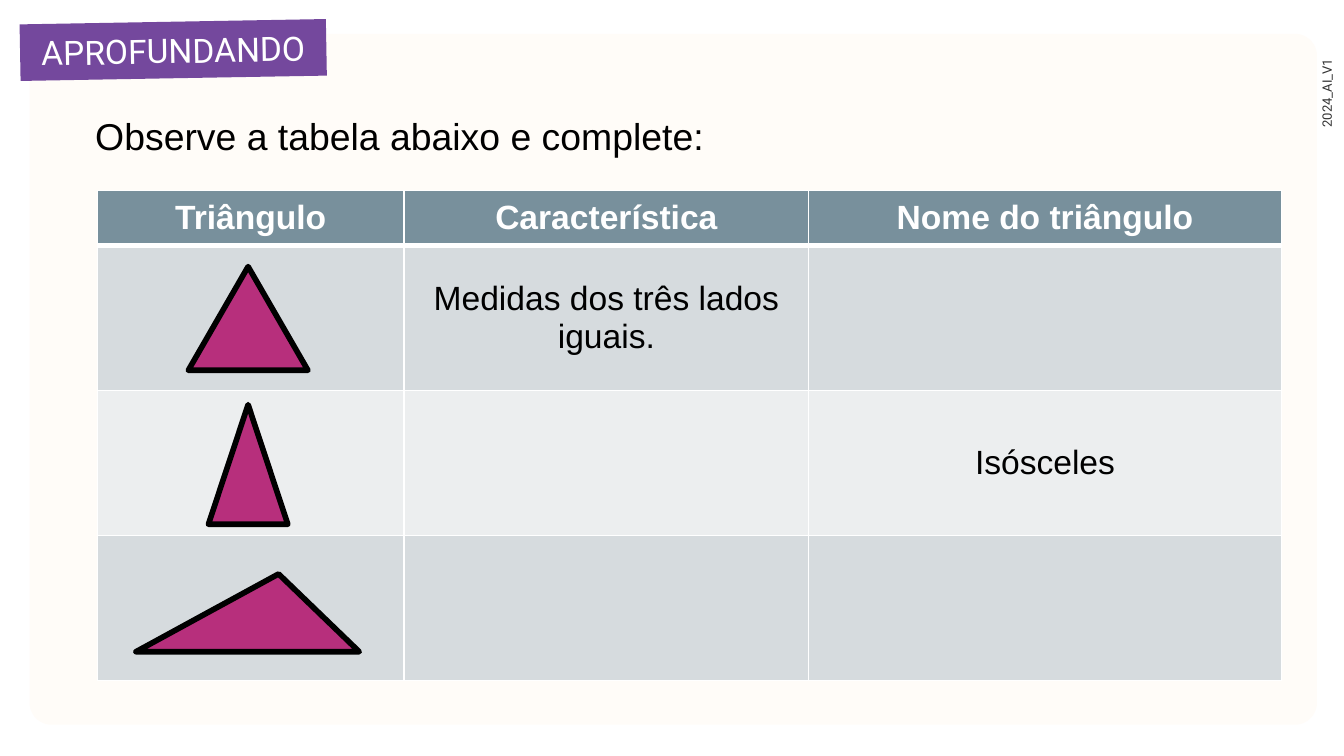
from lxml.etree import SubElement
from pptx import Presentation
from pptx.dml.color import RGBColor
from pptx.enum.shapes import MSO_SHAPE as Shape
from pptx.enum.text import MSO_ANCHOR as Anchor, MSO_AUTO_SIZE as AutoSize, PP_ALIGN as Align
from pptx.oxml import parse_xml
from pptx.oxml.ns import nsdecls, qn
from pptx.util import Cm, Pt

WHITE = RGBColor(0xFF, 0xFF, 0xFF)
BLACK = RGBColor(0, 0, 0)
CREAM = RGBColor(0xFF, 0xFC, 0xF8)
PURPLE = RGBColor(0x74, 0x48, 0x9D)
DARK_GRAY = RGBColor(0x33, 0x33, 0x33)
SLATE = RGBColor(0x78, 0x90, 0x9C)
BANDS = RGBColor(0xD6, 0xDB, 0xDE), RGBColor(0xEC, 0xEE, 0xEF)
MAGENTA = RGBColor(0xB7, 0x2F, 0x7C)

HEADERS = ["Triângulo", "Característica", "Nome do triângulo"]
ROWS = [
    ["", "Medidas dos três lados iguais.", ""],
    ["", "", "Isósceles"],
    ["", "", ""],
]
COLUMN_WIDTHS = [5.8, 7.64, 8.94]
HEADER_HEIGHT, ROW_HEIGHT = 1.04, 2.74


def place(box):
    return [Cm(length) for length in box]


def add_shape(page, kind, box, fill):
    shape = page.shapes.add_shape(kind, *place(box))
    shape.shadow.inherit = False
    shape.fill.solid()
    shape.fill.fore_color.rgb = fill
    shape.line.fill.background()
    return shape


def write(frame, text, size, color, font="Arial", bold=False, align=Align.CENTER):
    para = frame.paragraphs[0]
    para.alignment = align
    span = para.add_run()
    span.text = text
    span.font.name = font
    span.font.size = Pt(size)
    span.font.bold = bold
    span.font.color.rgb = color
    return para


def set_margins(frame, side, end):
    frame.margin_left = frame.margin_right = Cm(side)
    frame.margin_top = frame.margin_bottom = Cm(end)


def add_panel(page, box):
    panel = add_shape(page, Shape.ROUNDED_RECTANGLE, box, CREAM)
    panel.adjustments[0] = 0.032


def add_section_tag(page, box):
    tag = add_shape(page, Shape.RECTANGLE, box, PURPLE)
    tag.rotation = 359
    set_margins(tag.text_frame, 0.25, 0.15)
    write(tag.text_frame, "APROFUNDANDO", 18, WHITE, "Roboto")


def add_version(page, box):
    label = page.shapes.add_textbox(*place(box))
    label.rotation = 270
    label.text_frame.word_wrap = True
    set_margins(label.text_frame, 0.25, 0.25)
    write(label.text_frame, "2024_AI_V1", 7, DARK_GRAY, "Roboto", align=Align.LEFT)


def add_prompt(page, box):
    title = page.shapes.title
    title.left, title.top, title.width, title.height = place(box)
    # Bring the placeholder in front of the panel
    title.element.getparent().append(title.element)
    frame = title.text_frame
    frame.auto_size = AutoSize.NONE
    frame.word_wrap = True
    frame.vertical_anchor = Anchor.TOP
    set_margins(frame, 0.25, 0.25)
    para = write(frame, "Observe a tabela abaixo e complete:", 20, BLACK, align=Align.LEFT)
    para.space_after = Pt(6)
    properties = para._p.get_or_add_pPr()
    properties.set("marL", str(Cm(0.28)))
    properties.set("indent", "0")


def set_borders(cell, top, bottom):
    properties = cell._tc.get_or_add_tcPr()
    widths = [("lnL", 1), ("lnR", 1), ("lnT", top), ("lnB", bottom)]
    for index, (side, width) in enumerate(widths):
        properties.insert(index, parse_xml(
            f'<a:{side} {nsdecls("a")} w="{Pt(width)}"><a:solidFill>'
            f'<a:srgbClr val="{WHITE}"/></a:solidFill></a:{side}>'))


def add_table(page, box):
    table = page.shapes.add_table(len(ROWS) + 1, len(HEADERS), *place(box)).table
    for column, width in zip(table.columns, COLUMN_WIDTHS):
        column.width = Cm(width)
    for r, texts in enumerate([HEADERS] + ROWS):
        is_header = r == 0
        table.rows[r].height = Cm(HEADER_HEIGHT if is_header else ROW_HEIGHT)
        for c, text in enumerate(texts):
            cell = table.cell(r, c)
            cell.fill.solid()
            cell.fill.fore_color.rgb = SLATE if is_header else BANDS[(r - 1) % 2]
            cell.vertical_anchor = Anchor.MIDDLE
            set_margins(cell, 0.18, 0.1)
            set_borders(cell, 3 if r == 1 else 1, 3 if is_header else 1)
            if text:
                write(cell.text_frame, text, 18, WHITE if is_header else BLACK, bold=is_header)


def add_triangle(page, box, apex=0.5):
    triangle = add_shape(page, Shape.ISOSCELES_TRIANGLE, box, MAGENTA)
    triangle.adjustments[0] = apex
    triangle.line.color.rgb = BLACK
    triangle.line.width = Pt(3)
    SubElement(triangle.line._get_or_add_ln(), qn("a:round"))


def build_slide(deck):
    page = deck.slides.add_slide(deck.slide_layouts[5])
    # Background and labels
    add_panel(page, (0.56, 0.64, 24.33, 13.06))
    add_section_tag(page, (0.38, 0.41, 5.79, 1.07))
    add_version(page, (23.95, 1.02, 2.46, 0.81))
    # Exercise
    add_prompt(page, (1.27, 1.88, 22.94, 1.27))
    add_table(page, (1.84, 3.6, sum(COLUMN_WIDTHS), HEADER_HEIGHT + 3 * ROW_HEIGHT))
    # Equilateral, isosceles and scalene triangles
    add_triangle(page, (3.56, 5.04, 2.26, 1.96))
    add_triangle(page, (3.94, 7.65, 1.5, 2.26))
    add_triangle(page, (2.57, 10.85, 4.22, 1.47), 0.639)


def main():
    deck = Presentation()
    deck.slide_width, deck.slide_height = Cm(25.4), Cm(14.29)
    build_slide(deck)
    deck.save("out.pptx")


if __name__ == "__main__":
    main()
